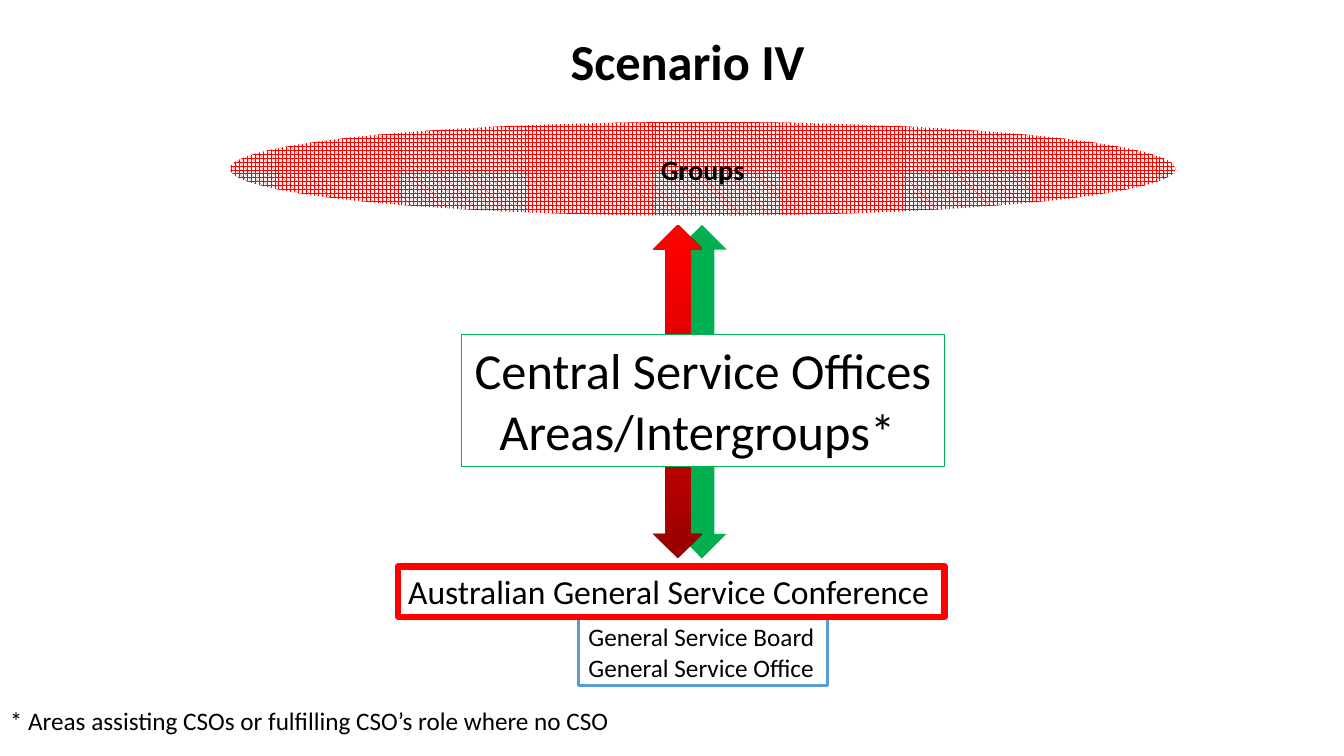
"""Build the Scenario IV slide showing service structure from groups to conference."""
from copy import deepcopy

from pptx import Presentation
from pptx.dml.color import RGBColor
from pptx.enum.dml import MSO_PATTERN
from pptx.enum.shapes import MSO_SHAPE
from pptx.enum.text import MSO_ANCHOR, MSO_AUTO_SIZE, PP_ALIGN
from pptx.oxml.ns import qn
from pptx.util import Pt

COLORS = {
    "black": "000000",
    "white": "FFFFFF",
    "green": "00B050",
    "blue": "5B9BD5",
    "red": "FF0000",
    "mid_red": "D70000",
    "dark_red": "970000",
}


def color(name):
    return RGBColor.from_string(COLORS[name])


def write_text(shape, lines, size, bold=False, align=PP_ALIGN.LEFT,
               anchor=MSO_ANCHOR.TOP, fit=MSO_AUTO_SIZE.SHAPE_TO_FIT_TEXT):
    frame = shape.text_frame
    frame.text = "\n".join(lines)
    frame.word_wrap = False
    frame.auto_size = fit
    frame.vertical_anchor = anchor
    for paragraph in frame.paragraphs:
        paragraph.alignment = align
        paragraph.font.name = "Calibri"
        paragraph.font.size = Pt(size)
        paragraph.font.bold = bold
        paragraph.font.color.rgb = color("black")


def add_title(slide, text, left, top, width, height):
    title = slide.shapes.title
    title.left, title.top = Pt(left), Pt(top)
    title.width, title.height = Pt(width), Pt(height)
    write_text(title, [text], 36, bold=True)


def add_label(slide, lines, box, size, line=None, line_width=0, fill=None,
              align=PP_ALIGN.LEFT):
    label = slide.shapes.add_textbox(*map(Pt, box))
    write_text(label, lines, size, align=align)
    if line:
        label.line.color.rgb = color(line)
        label.line.width = Pt(line_width)
    if fill:
        label.fill.solid()
        label.fill.fore_color.rgb = color(fill)


def add_plain_shape(slide, kind, box):
    shape = slide.shapes.add_shape(kind, *map(Pt, box))
    shape.shadow.inherit = False
    shape.line.fill.background()
    return shape


def add_arrow(slide, left):
    return add_plain_shape(slide, MSO_SHAPE.UP_DOWN_ARROW, (left, 160.6, 35.3, 238.3))


def fill_gradient(shape, names):
    shape.fill.gradient()
    shape.fill.gradient_angle = 90
    stop_list = shape.element.spPr.find(qn("a:gradFill")).find(qn("a:gsLst"))
    while len(stop_list) < len(names):
        stop_list.append(deepcopy(stop_list[-1]))
    for index, (stop, name) in enumerate(zip(shape.fill.gradient_stops, names)):
        stop.position = index / (len(names) - 1)
        stop.color.rgb = color(name)


def add_groups(slide):
    groups = add_plain_shape(slide, MSO_SHAPE.OVAL, (164.2, 87.1, 675.4, 67))
    groups.fill.patterned()
    groups.fill.pattern = MSO_PATTERN.SPHERE
    groups.fill.fore_color.rgb = color("red")
    groups.fill.back_color.rgb = color("white")
    write_text(groups, ["Groups"], 20, bold=True, align=PP_ALIGN.CENTER,
               anchor=MSO_ANCHOR.MIDDLE, fit=MSO_AUTO_SIZE.NONE)


def main():
    presentation = Presentation()
    presentation.slide_width, presentation.slide_height = Pt(960), Pt(540)
    slide = presentation.slides.add_slide(presentation.slide_layouts[5])

    add_title(slide, "Scenario IV", 400.3, 18, 183.6, 51.1)
    add_label(slide, ["General Service Board", "General Service Office"],
              (413.3, 440.6, 177.8, 49.2), 18, "blue", 2.25)
    green_arrow = add_arrow(slide, 483.8)
    green_arrow.fill.solid()
    green_arrow.fill.fore_color.rgb = color("green")
    fill_gradient(add_arrow(slide, 466.6), ["dark_red", "mid_red", "red"])
    add_groups(slide)
    add_label(slide, ["Central Service Offices", "Areas/Intergroups* "],
              (329.8, 239, 344.9, 94.3), 36, "green", 0.75, "white", PP_ALIGN.CENTER)
    add_label(slide, ["Australian General Service Conference"],
              (284.4, 404.6, 390.2, 36), 24, "red", 4.5)
    add_label(slide, ["* Areas assisting CSOs or fulfilling CSO’s role where no CSO"],
              (0, 500.4, 451.4, 28.8), 18)

    presentation.save("out.pptx")


if __name__ == "__main__":
    main()
